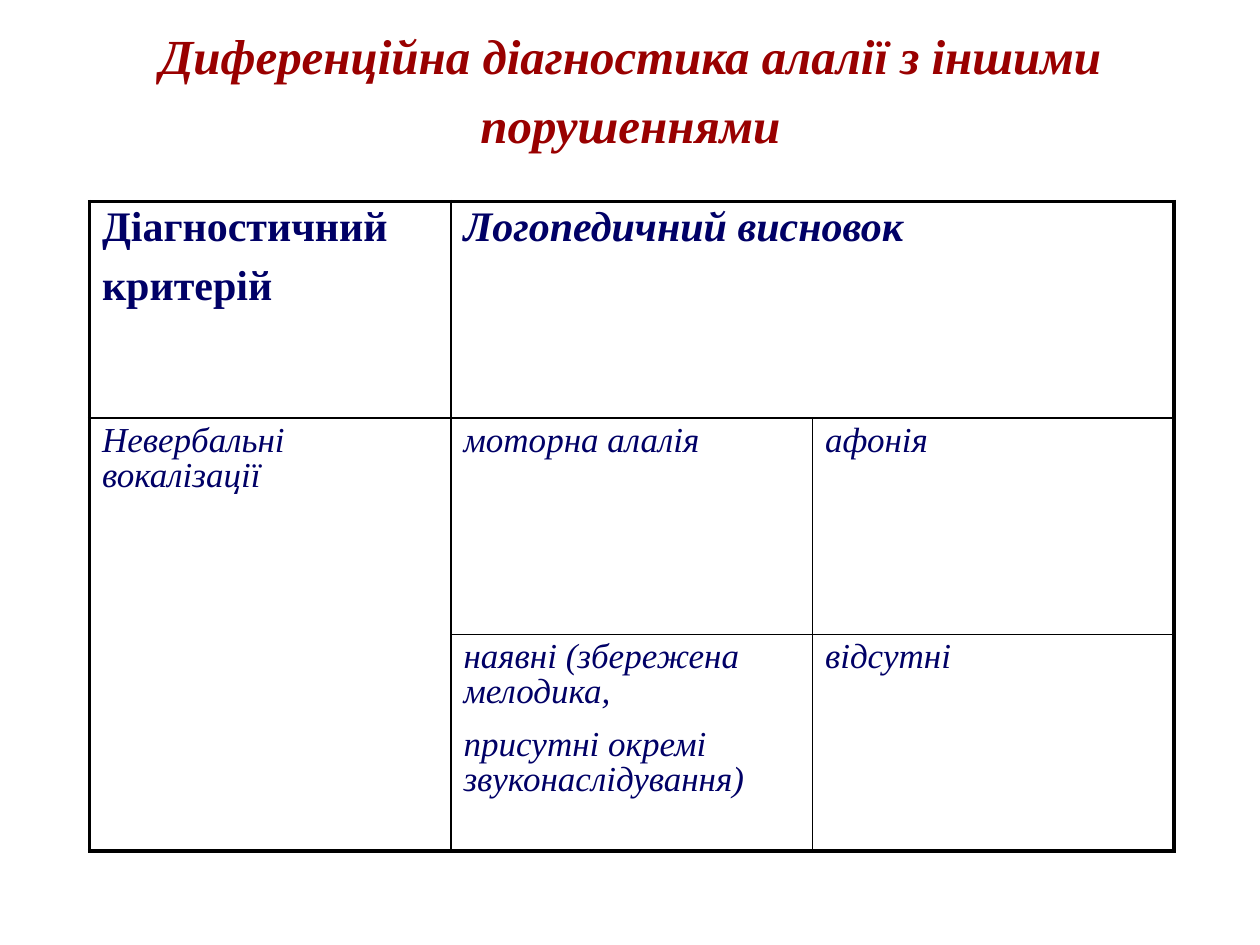
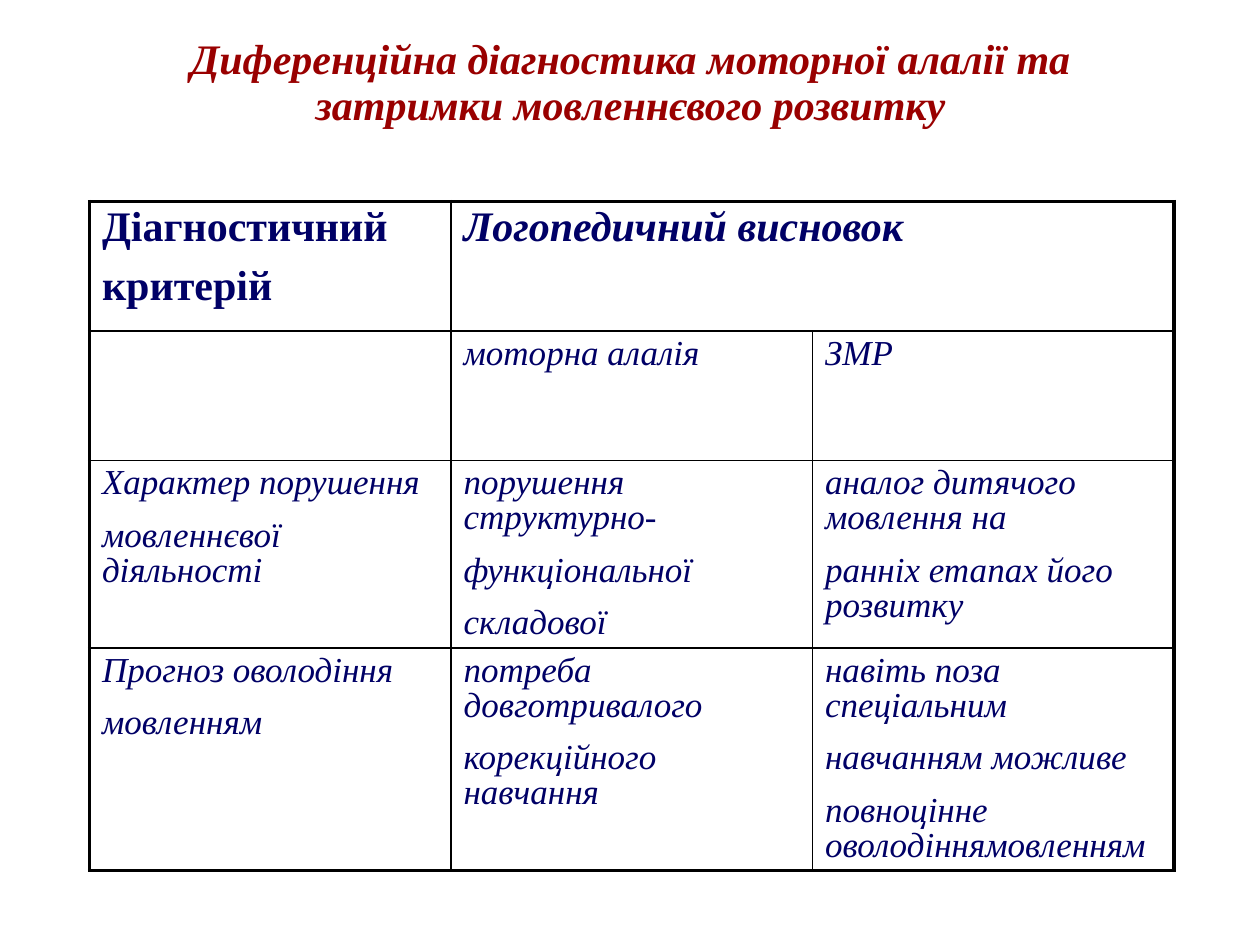
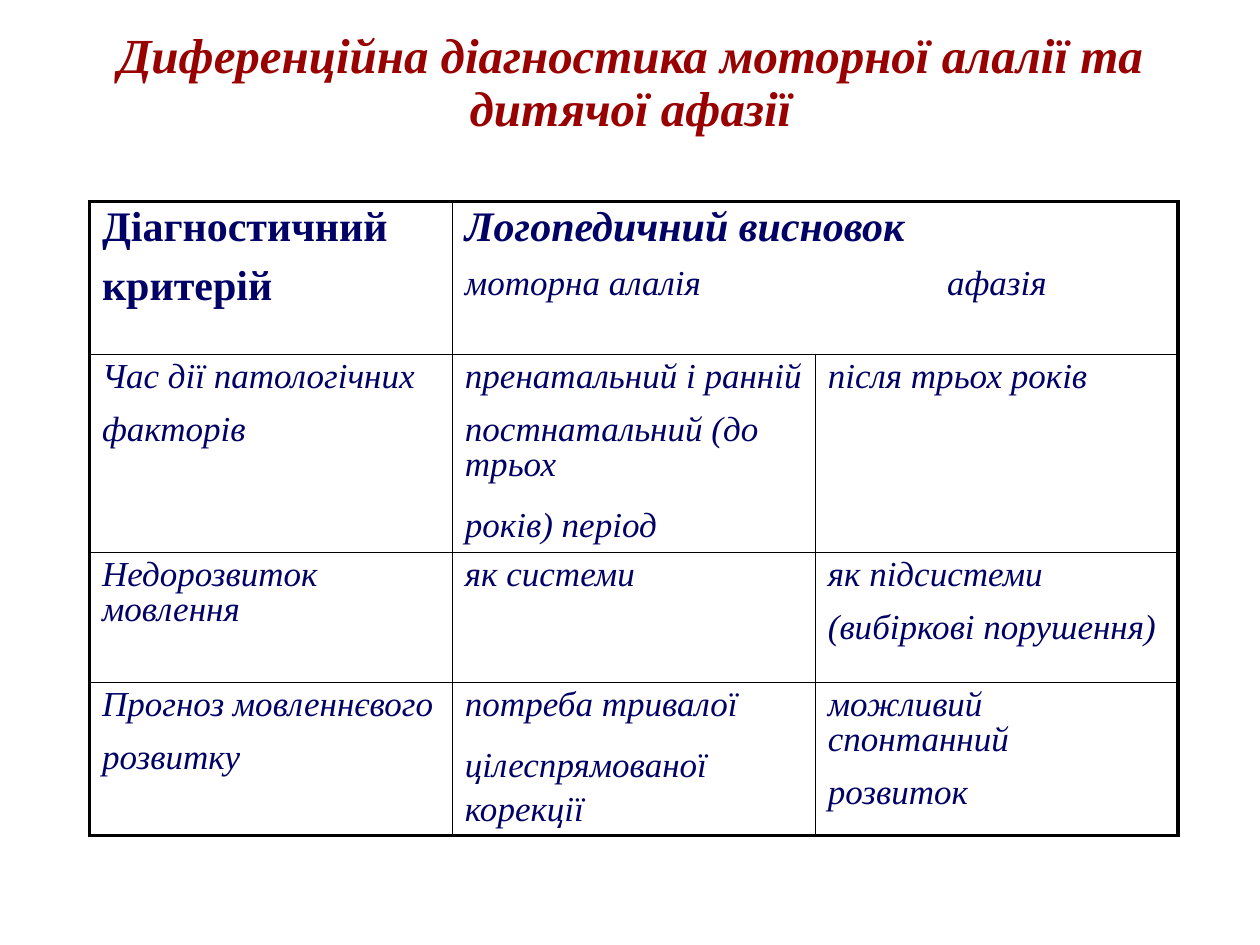
from dataclasses import dataclass
from typing import NamedTuple

from lxml.etree import SubElement
from pptx import Presentation
from pptx.dml.color import RGBColor
from pptx.enum.text import MSO_ANCHOR as Anchor, MSO_AUTO_SIZE as AutoSize, PP_ALIGN as Align
from pptx.oxml.ns import qn
from pptx.util import Pt

CRIMSON = "990000"
NAVY = "000066"
BLACK = "000000"
SERIF = "Times New Roman"
OUTER, INNER = 2.25, 1
TABLE_LEFT, TABLE_TOP = 51.1, 115.2
TITLE_BOX = (51.8, 9.4, 617, 77)


class Line(NamedTuple):
    text: str
    size: float = 20
    bold: bool = False
    italic: bool = True
    before: float = 10
    spacing: float = 0.9
    tab: float = 0


class Span(NamedTuple):
    row: int
    column: int
    last_row: int
    last_column: int


@dataclass
class Comparison:
    title: str
    title_size: float
    column_width: float
    row_heights: list[float]
    rows: list[list[list[Line | str]]]
    spans: list[Span]
    title_spacing: float = 0.9


CRITERION = [Line("Діагностичний", 24, True, False), Line("критерій", 24, True, False)]
CONCLUSION = Line("Логопедичний висновок", 24, True)
CONCLUSION_SPAN = Span(0, 1, 0, 2)

COMPARISONS = [
    Comparison(
        "Диференційна діагностика алалії з іншими порушеннями", 28, 206.6, [123.7] * 3,
        [
            [CRITERION, [CONCLUSION], []],
            [["Невербальні вокалізації"], ["моторна алалія"], ["афонія"]],
            [[], ["наявні (збережена мелодика,", "присутні окремі звуконаслідування)"], ["відсутні"]],
        ],
        [CONCLUSION_SPAN, Span(1, 0, 2, 0)],
        title_spacing=1.18,
    ),
    Comparison(
        "Диференційна діагностика моторної алалії та затримки мовленнєвого розвитку",
        24, 206.6, [74, 74, 107.2, 126.8],
        [
            [CRITERION, [CONCLUSION], []],
            [[], ["моторна алалія"], ["ЗМР"]],
            [["Характер порушення", "мовленнєвої діяльності"],
             ["порушення структурно-", "функціональної", "складової"],
             ["аналог дитячого мовлення на", "ранніх етапах його розвитку"]],
            [["Прогноз оволодіння", "мовленням"],
             ["потреба довготривалого", "корекційного навчання"],
             ["навіть поза спеціальним", "навчанням можливе", "повноцінне оволодіннямовленням"]],
        ],
        [CONCLUSION_SPAN],
    ),
    Comparison(
        "Диференційна діагностика моторної алалії та дитячої афазії",
        28, 207.4, [87.4, 113.2, 74.2, 83.2],
        [
            [CRITERION, [CONCLUSION, Line("моторна алалія\tафазія", tab=275.5)], []],
            [["Час дії патологічних", "факторів"],
             ["пренатальний і ранній", "постнатальний (до трьох", Line("років) період", before=15)],
             ["після трьох років"]],
            [["Недорозвиток мовлення"], ["як системи"], ["як підсистеми", "(вибіркові порушення)"]],
            [["Прогноз мовленнєвого", "розвитку"],
             ["потреба тривалої", Line("цілеспрямованої корекції", spacing=1.13)],
             ["можливий спонтанний", "розвиток"]],
        ],
        [CONCLUSION_SPAN],
    ),
]


def rgb(value: str) -> RGBColor:
    return RGBColor.from_string(value)


def write(paragraph, text: str, *, size: float, color: str, bold: bool, italic: bool,
          spacing: float = 0.9, before: float = 0, align=Align.LEFT, tab: float = 0) -> None:
    paragraph.alignment = align
    paragraph.line_spacing = spacing
    paragraph.space_before = Pt(before)
    if tab:
        stops = SubElement(paragraph._p.get_or_add_pPr(), qn("a:tabLst"))
        SubElement(stops, qn("a:tab"), pos=str(Pt(tab)), algn="l")
    run = paragraph.add_run()
    run.text = text
    font = run.font
    font.name, font.size, font.bold, font.italic = SERIF, Pt(size), bold, italic
    font.color.rgb = rgb(color)


def set_borders(cell, widths: dict[str, float]) -> None:
    properties = cell._tc.get_or_add_tcPr()
    for side, width in widths.items():
        border = SubElement(properties, qn(f"a:ln{side}"), w=str(Pt(width)))
        SubElement(SubElement(border, qn("a:solidFill")), qn("a:srgbClr"), val=BLACK)


def fill_cell(cell, lines: list[Line | str]) -> None:
    for index, entry in enumerate(lines):
        line = Line(entry) if isinstance(entry, str) else entry
        frame = cell.text_frame
        paragraph = frame.add_paragraph() if index else frame.paragraphs[0]
        write(paragraph, line.text, size=line.size, color=NAVY, bold=line.bold, italic=line.italic,
              spacing=line.spacing, before=line.before if index else 0, tab=line.tab)


def add_title(slide, comparison: Comparison) -> None:
    title = slide.shapes.title
    title.left, title.top, title.width, title.height = map(Pt, TITLE_BOX)
    frame = title.text_frame
    frame.word_wrap = True
    frame.auto_size = AutoSize.NONE
    frame.vertical_anchor = Anchor.MIDDLE
    write(frame.paragraphs[0], comparison.title, size=comparison.title_size, color=CRIMSON,
          bold=True, italic=True, spacing=comparison.title_spacing, align=Align.CENTER)


def add_comparison_table(slide, comparison: Comparison) -> None:
    row_count, column_count = len(comparison.rows), len(comparison.rows[0])
    table = slide.shapes.add_table(
        row_count, column_count, Pt(TABLE_LEFT), Pt(TABLE_TOP),
        Pt(comparison.column_width * column_count), Pt(sum(comparison.row_heights))).table
    table.first_row = table.horz_banding = False
    for column in table.columns:
        column.width = Pt(comparison.column_width)
    for row, height in zip(table.rows, comparison.row_heights):
        row.height = Pt(height)
    for span in comparison.spans:
        table.cell(span.row, span.column).merge(table.cell(span.last_row, span.last_column))
    for r, row in enumerate(comparison.rows):
        for c, lines in enumerate(row):
            cell = table.cell(r, c)
            last_row = r + cell.span_height - 1 if cell.is_merge_origin else r
            last_column = c + cell.span_width - 1 if cell.is_merge_origin else c
            on_edge = {"L": c == 0, "R": last_column == column_count - 1,
                       "T": r == 0, "B": last_row == row_count - 1}
            set_borders(cell, {side: OUTER if edge else INNER for side, edge in on_edge.items()})
            cell.fill.background()
            fill_cell(cell, lines)


def main() -> None:
    deck = Presentation()
    deck.slide_width, deck.slide_height = Pt(720), Pt(540)
    title_only = deck.slide_layouts[5]
    for comparison in COMPARISONS:
        slide = deck.slides.add_slide(title_only)
        add_title(slide, comparison)
        add_comparison_table(slide, comparison)
    deck.save("out.pptx")


if __name__ == "__main__":
    main()
